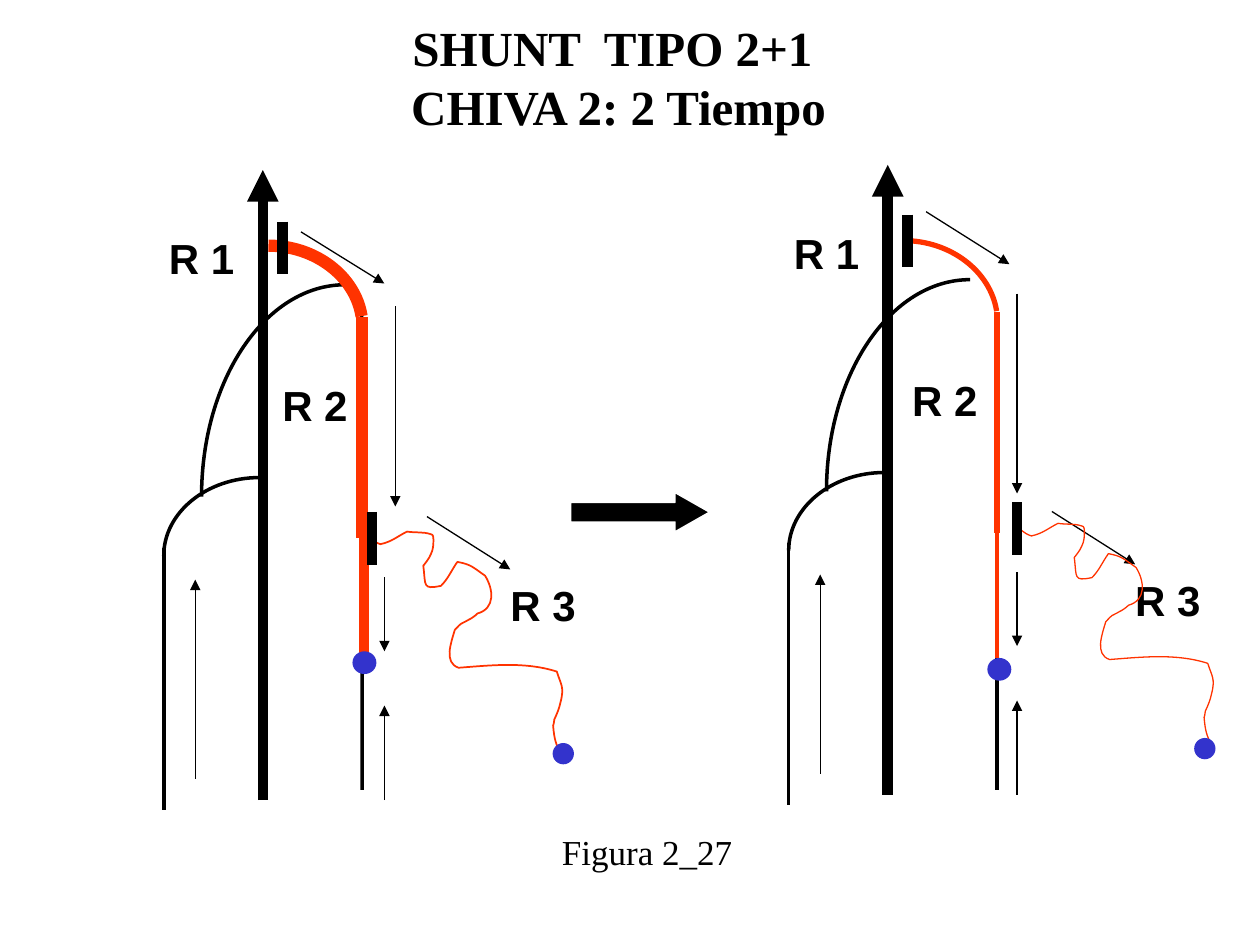
from pptx import Presentation
from pptx.dml.color import RGBColor
from pptx.enum.shapes import MSO_CONNECTOR, MSO_SHAPE
from pptx.enum.text import MSO_AUTO_SIZE, PP_ALIGN
from pptx.oxml.ns import qn
from pptx.util import Pt
from lxml import etree

STRAIGHT = MSO_CONNECTOR.STRAIGHT
OVAL = MSO_SHAPE.OVAL
ARROW = MSO_SHAPE.RIGHT_ARROW
CENTER = PP_ALIGN.CENTER
LEFT = PP_ALIGN.LEFT
FIT = MSO_AUTO_SIZE.SHAPE_TO_FIT_TEXT

BLACK, RED, BLUE, WHITE = "000000", "FF3300", "3333CC", "FFFFFF"
SERIF, SANS = "Times New Roman", "Arial"
THIN, MID, BOLD = 0.75, 2, 6

TITLE = ["SHUNT  TIPO 2+1", " CHIVA 2: 2 Tiempo"]
CAPTION = "Figura 2_27"

LOW_ARC = [(93.6, 317.5), (93.6, 293), (118.1, 272.9), (148.3, 272.9)]
HIGH_ARC = [(115.2, 283.7), (115.2, 216.7), (151.9, 162.7), (197.3, 162.7)]
RED_ARC = [(153.4, 140.4), (180, 140.4), (203, 157.7), (206.6, 180.7)]
SIDE = (93.6, 313.2, 93.6, 463)
TRUNK = (150.2, 457.2, 150.2, 97.2)
FLOWS = [(111.6, 445, 111.6, 331.2), (244, 295.2, 291.6, 325.4)]
LABELS = [("R 1", 96.5, 132.8), ("R 3", 291.6, 331)]

BRANCH = [
    (207.4, 303.1),
    (210.2, 306.7), (213.1, 309.6), (217.4, 311),
    (223.9, 309.6), (226.8, 306.7), (232.6, 303.8),
    (237.6, 304.6), (241.9, 303.8), (246.2, 305.3),
    (247.7, 305.3), (247.7, 307.4), (247.7, 308.2),
    (247.7, 311), (247.7, 313.9), (246.2, 316.8),
    (245.5, 319), (241.9, 323.3), (241.9, 323.3),
    (243.4, 334.8), (241.2, 337), (252, 334.8),
    (256.3, 330.5), (257.8, 326.2), (261.4, 321.1),
    (269.3, 322.6), (270, 324), (277.2, 329),
    (282.2, 337), (283, 347.8), (272.9, 350.6),
    (271.4, 352.1), (269.3, 353.5), (267.8, 354.2),
    (267.1, 355), (265.7, 355), (265, 355.7),
    (262.8, 356.4), (261.4, 358.6), (259.9, 360),
    (257.8, 367.2), (253.4, 378.7), (262.1, 381.6),
    (280.8, 380.2), (300.2, 378), (318.2, 383.8),
    (320.4, 391), (322.6, 392.4), (320.4, 401),
    (319.7, 404.6), (318.2, 408.2), (316.8, 411.1),
    (316.8, 412.6), (316.1, 414.7), (316.1, 414.7),
    (316.8, 422.6), (317.5, 424.8), (320.4, 430.6),
]

PANELS = [
    dict(
        shift=(0, 0), bend=(0, 0), twig=(0, 0), arc=7, wire=1,
        vein=(206.6, 179.3, 207, 451.4),
        reds=[(207.9, 307.4, 207.9, 379.4, 6), (206.8, 181.4, 206.8, 307.4, 7)],
        flows=[(172, 132.5, 219.6, 162), (225.9, 175, 225.9, 289.4),
               (219.7, 329.8, 219.7, 372.2), (219.7, 457.2, 219.7, 403.2)],
        bars=[(212.6, 292.5, 212.6, 322.6), (161.3, 126.7, 161.3, 156.7)],
        dots=[(201.4, 372.2, 13.7, 13), (315.8, 424.6, 12.2, 12.2)],
        label=("R 2", 161.3, 217),
    ),
    dict(
        shift=(357.1, -2.9), bend=(362.9, -2.9), twig=(372, -4.7), arc=3, wire=0.75,
        vein=(569.7, 179.3, 569.7, 451.4),
        reds=[(569.7, 303.8, 569.7, 375.8, 2.25), (569.7, 178.4, 569.7, 304.4, 3)],
        flows=[(529.2, 121, 576.8, 151), (581.2, 167.8, 581.2, 282),
               (581.2, 326.9, 581.2, 369.2), (581.2, 454.3, 581.2, 400.3)],
        bars=[(581.2, 287, 581.2, 317), (518.7, 122.6, 518.7, 152.6)],
        dots=[(564.2, 376, 13.7, 13), (682.4, 421.7, 12.2, 12.2)],
        label=("R 2", 521.2, 214.2),
    ),
]


def tint(code):
    return RGBColor.from_string(code)


def text(lines, box, size, font, bold=False, align=LEFT, wrap=False, pad=0):
    shape = slide.shapes.add_textbox(*map(Pt, box))
    frame = shape.text_frame
    frame.word_wrap = wrap
    frame.auto_size = FIT
    if not pad:
        frame.margin_left = frame.margin_right = 0
        frame.margin_top = frame.margin_bottom = 0
    for i, line in enumerate(lines):
        para = frame.add_paragraph() if i else frame.paragraphs[0]
        para.alignment = align
        run = para.add_run()
        run.text = line
        run.font.name = font
        run.font.size = Pt(size)
        run.font.bold = bold
        run.font.color.rgb = tint(BLACK)


def line(ends, width, color=BLACK, head=False, shift=(0, 0)):
    x1, y1, x2, y2 = ends
    dx, dy = shift
    link = slide.shapes.add_connector(
        STRAIGHT, Pt(x1 + dx), Pt(y1 + dy), Pt(x2 + dx), Pt(y2 + dy))
    link.line.color.rgb = tint(color)
    link.line.width = Pt(width)
    if head:
        tip = etree.SubElement(link.line._get_or_add_ln(), qn("a:tailEnd"))
        tip.set("type", "triangle")
    etree.SubElement(link._element.spPr, qn("a:effectLst"))


def curve(knots, width, color, shift):
    dx, dy = shift
    dots = [(Pt(x + dx), Pt(y + dy)) for x, y in knots]
    pen = slide.shapes.build_freeform(*dots[0])
    pen.add_line_segments(dots[1:], close=False)
    shape = pen.convert_to_shape()
    legs = list(shape._element.iter(qn("a:lnTo")))
    for i in range(0, len(legs), 3):
        bend = etree.Element(qn("a:cubicBezTo"))
        legs[i].addprevious(bend)
        for leg in legs[i:i + 3]:
            bend.append(leg[0])
            leg.getparent().remove(leg)
    shape.shadow.inherit = False
    shape.fill.background()
    shape.line.color.rgb = tint(color)
    shape.line.width = Pt(width)


def solid(kind, box, color):
    shape = slide.shapes.add_shape(kind, *map(Pt, box))
    shape.shadow.inherit = False
    shape.fill.solid()
    shape.fill.fore_color.rgb = tint(color)
    shape.line.fill.background()
    return shape


def panel(part):
    shift = part["shift"]
    curve(LOW_ARC, MID, BLACK, shift)
    line(SIDE, MID, shift=shift)
    line(part["vein"], MID)
    curve(HIGH_ARC, MID, BLACK, shift)
    curve(RED_ARC, part["arc"], RED, part["bend"])
    for *ends, width in part["reds"]:
        line(ends, width, RED)
    line(TRUNK, BOLD, head=True, shift=shift)
    for ends in FLOWS:
        line(ends, THIN, head=True, shift=shift)
    for ends in part["flows"]:
        line(ends, THIN, head=True)
    spots = [(word, x + shift[0], y + shift[1]) for word, x, y in LABELS]
    for word, x, y in spots + [part["label"]]:
        text([word], (x, y, 37.4, 28.8), 24, SANS, bold=True)
    curve(BRANCH, part["wire"], RED, part["twig"])
    for box in part["dots"]:
        solid(OVAL, box, BLUE)
    for ends in part["bars"]:
        line(ends, BOLD)


deck = Presentation()
deck.slide_width, deck.slide_height = Pt(720), Pt(540)
slide = deck.slides.add_slide(deck.slide_layouts[6])

text(TITLE, (48, 10, 604, 67), 28, SERIF, bold=True, align=CENTER, wrap=True)
for part in PANELS:
    panel(part)
text([CAPTION], (314, 471.2, 111.6, 31), 20, SERIF, pad=1)
arrow = solid(ARROW, (326.2, 281.5, 79.2, 22.3), BLACK)
arrow.adjustments[0] = 0.5
arrow.adjustments[1] = 0.88
arrow.line.color.rgb = tint(WHITE)
arrow.line.width = Pt(THIN)

deck.save("out.pptx")
